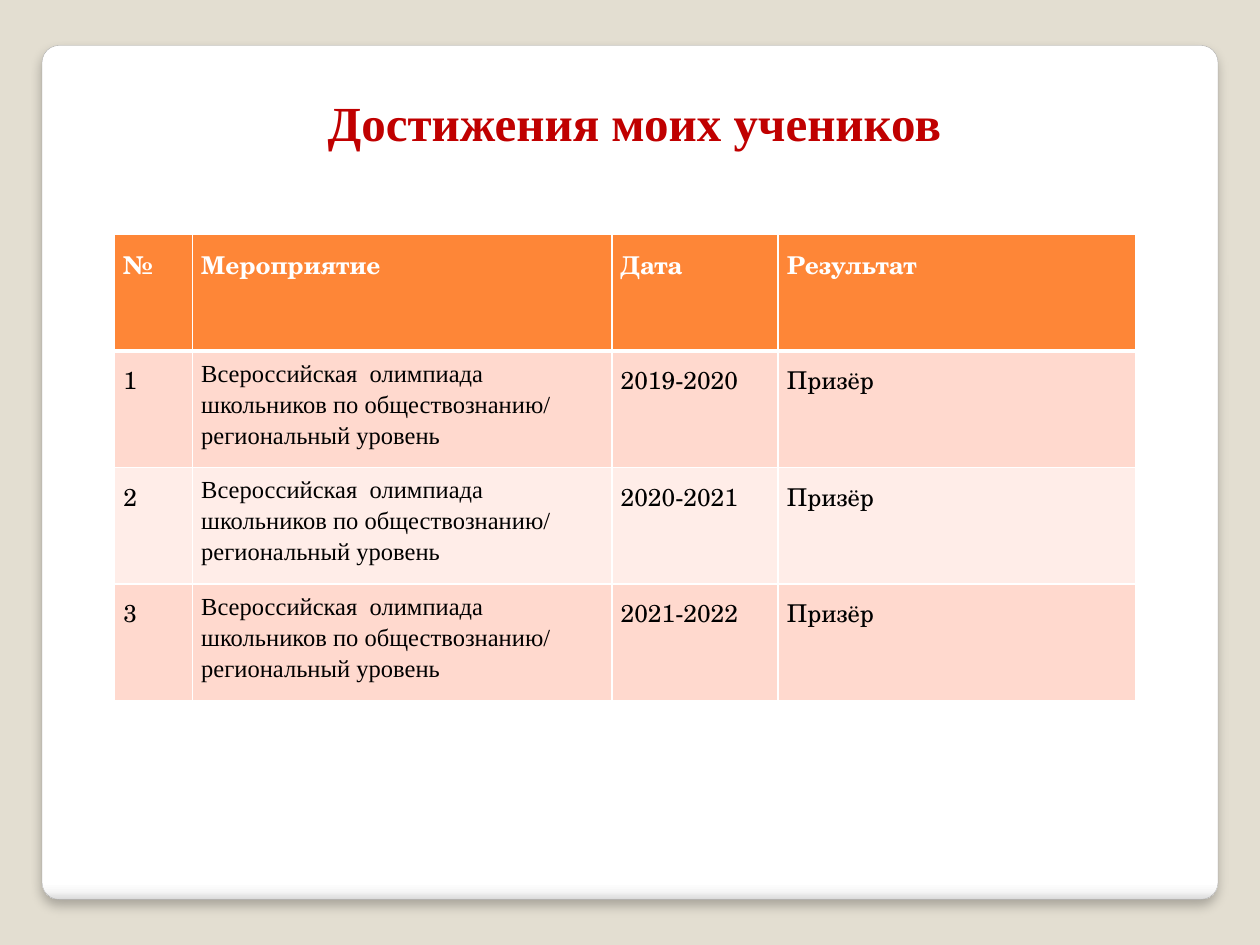
from dataclasses import dataclass

from lxml.etree import SubElement
from pptx import Presentation
from pptx.dml.color import RGBColor
from pptx.enum.shapes import MSO_SHAPE
from pptx.enum.text import MSO_ANCHOR, PP_ALIGN
from pptx.oxml import parse_xml
from pptx.oxml.ns import nsdecls, qn
from pptx.util import Pt


@dataclass(frozen=True)
class Theme:
    background: str = "E3DED1"
    panel_line: str = "A4A4A4"
    title: str = "C00000"
    header: str = "FE8637"
    bands: tuple = ("FFD9CE", "FFEDE8")
    light: str = "FFFFFF"
    dark: str = "000000"
    serif: str = "Times New Roman"
    schoolbook: str = "TeX Gyre Schola"
    title_size: int = 28
    table_size: int = 14


THEME = Theme()
PANEL_STOPS = ((0, "FFFFFF"), (98, "FFFFFF"), (99, "F7F7F7"), (100, "DADADA"))
HEADINGS = ("№", "Мероприятие", "Дата", "Результат")
OLYMPIAD = "Всероссийская  олимпиада школьников по обществознанию/\nрегиональный уровень"
YEARS = ("2019-2020", "2020-2021", "2021-2022")
COLUMN_WIDTHS = (44.5, 239.75, 95, 204.5)


def rgb(code):
    return RGBColor.from_string(code)


def set_attributes(target, values):
    for name, value in values.items():
        setattr(target, name, value)


def style_font(font, color, **values):
    set_attributes(font, values)
    font.color.rgb = rgb(color)


def add_panel(slide, left, top, width, height):
    """Add the white rounded sheet with a shaded bottom edge and a soft shadow."""
    panel = slide.shapes.add_shape(
        MSO_SHAPE.ROUNDED_RECTANGLE, Pt(left), Pt(top), Pt(width), Pt(height))
    panel.adjustments[0] = 0.02
    panel.line.color.rgb = rgb(THEME.panel_line)
    panel.line.width = Pt(0.16)
    stops = "".join(
        f'<a:gs pos="{percent * 1000}"><a:srgbClr val="{color}"/></a:gs>'
        for percent, color in PANEL_STOPS)
    gradient = parse_xml(
        f'<a:gradFill {nsdecls("a")}><a:gsLst>{stops}</a:gsLst>'
        '<a:lin ang="5400000" scaled="0"/></a:gradFill>')
    shadow = parse_xml(
        f'<a:effectLst {nsdecls("a")}><a:outerShdw blurRad="{Pt(6)}" dist="{Pt(4)}" '
        f'dir="5400000" rotWithShape="0"><a:srgbClr val="{THEME.dark}">'
        '<a:alpha val="25000"/></a:srgbClr></a:outerShdw></a:effectLst>')
    properties = panel._element.spPr
    properties.find(qn("a:prstGeom")).addnext(gradient)
    properties.find(qn("a:ln")).addnext(shadow)


def add_title(slide, left, top, width, height):
    frame = slide.shapes.add_textbox(
        Pt(left), Pt(top), Pt(width), Pt(height)).text_frame
    set_attributes(frame, {
        "word_wrap": True, "vertical_anchor": MSO_ANCHOR.MIDDLE,
        "margin_top": Pt(3.6), "margin_bottom": Pt(43)})
    paragraph = frame.paragraphs[0]
    paragraph.alignment = PP_ALIGN.CENTER
    run = paragraph.add_run()
    run.text = "Достижения моих учеников"
    style_font(run.font, THEME.title, name=THEME.serif,
               size=Pt(THEME.title_size), bold=True)


def set_borders(cell, widths):
    properties = cell._tc.get_or_add_tcPr()
    for side, width in widths.items():
        line = SubElement(properties, qn(f"a:ln{side}"), w=str(Pt(width)))
        fill = SubElement(line, qn("a:solidFill"))
        SubElement(fill, qn("a:srgbClr"), val=THEME.light)


def fill_cell(cell, text, row, font_name):
    is_header = row == 0
    set_borders(cell, {"L": 1, "R": 1, "T": 3 if row == 1 else 1,
                       "B": 3 if is_header else 1})
    cell.fill.solid()
    cell.fill.fore_color.rgb = rgb(
        THEME.header if is_header else THEME.bands[(row - 1) % 2])
    set_attributes(cell, {"margin_left": Pt(5), "margin_right": Pt(5),
                          "margin_top": Pt(3), "margin_bottom": Pt(3)})
    cell.text_frame.text = text
    for paragraph in cell.text_frame.paragraphs:
        paragraph.line_spacing = 1.15
        for run in paragraph.runs:
            style_font(run.font, THEME.light if is_header else THEME.dark,
                       name=font_name, size=Pt(THEME.table_size), bold=is_header)


def add_results(slide, left, top, width, height):
    """Add the table of results; column widths are scaled to the given width."""
    rows = [HEADINGS] + [(str(number), OLYMPIAD, year, "Призёр")
                         for number, year in enumerate(YEARS, 1)]
    table = slide.shapes.add_table(
        len(rows), len(HEADINGS), Pt(left), Pt(top), Pt(width), Pt(height)).table
    for column, share in zip(table.columns, COLUMN_WIDTHS):
        column.width = Pt(width * share / sum(COLUMN_WIDTHS))
    for row, texts in enumerate(rows):
        table.rows[row].height = Pt(height / len(rows))
        for column, text in enumerate(texts):
            font_name = THEME.serif if text == OLYMPIAD else THEME.schoolbook
            fill_cell(table.cell(row, column), text, row, font_name)


def main():
    presentation = Presentation()
    set_attributes(presentation, {"slide_width": Pt(720), "slide_height": Pt(540)})
    slide = presentation.slides.add_slide(presentation.slide_layouts[6])
    slide.background.fill.solid()
    slide.background.fill.fore_color.rgb = rgb(THEME.background)
    add_panel(slide, 24, 26, 672, 488)
    add_title(slide, 70.5, 47, 584, 85)
    add_results(slide, 65.5, 134, 583.75, 266.4)
    presentation.save("out.pptx")


if __name__ == "__main__":
    main()
